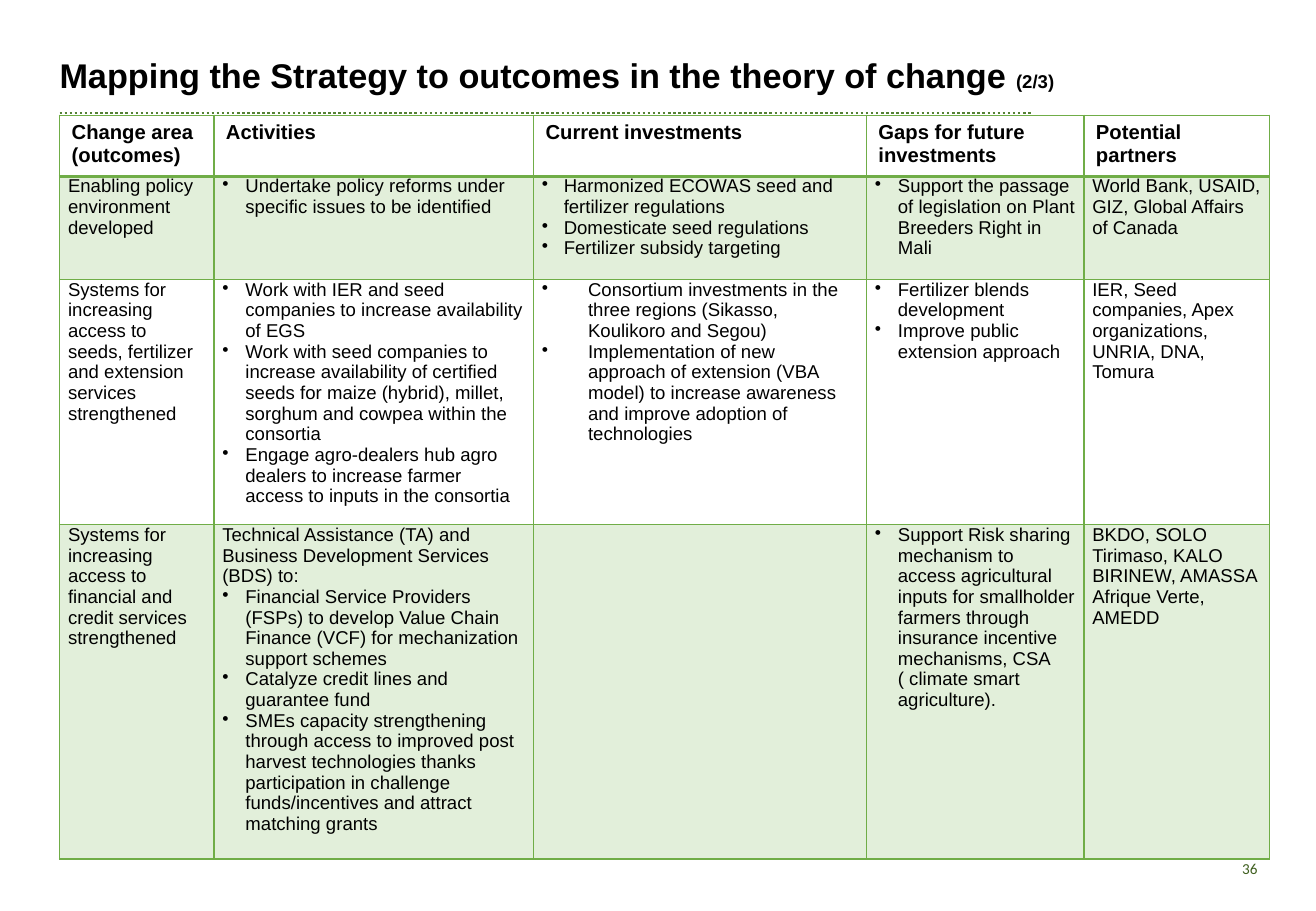
from dataclasses import dataclass

import pptx
import pptx.dml.color
import pptx.enum.dml
import pptx.enum.shapes
import pptx.enum.text
import pptx.oxml
import pptx.oxml.ns
import pptx.util
from lxml import etree
from pptx.util import Inches, Pt


@dataclass(frozen=True)
class Theme:
    ink: str = "000000"
    border: str = "70AD47"
    band: str = "E2EFDA"
    rule: str = "548135"
    page_number: str = "3F5F1F"
    font: str = "Arial"
    number_font: str = "Calibri"
    title_size: float = 20.3
    header_size: float = 12
    body_size: float = 11
    number_size: float = 9


THEME = Theme()
BULLET = "• "  # marks the bulleted paragraphs in ROWS

COLUMN_WIDTHS = [1.27, 2.63, 2.74, 1.79, 1.53]
ROW_HEIGHTS = [0.48, 0.85, 1.87, 2.55]
BULLET_INDENTS = [0.19, 0.19, 0.18, 0.19, 0.19]
WIDE_INDENT_CELL, WIDE_INDENT = (2, 2), 0.38

HEADERS = ["Change area (outcomes)", "Activities", "Current investments",
           "Gaps for future investments", "Potential partners"]
ROWS = [
    [
        ["Enabling policy environment developed"],
        ["• Undertake policy reforms under specific issues to be identified"],
        ["• Harmonized ECOWAS seed and fertilizer regulations",
         "• Domesticate seed regulations",
         "• Fertilizer subsidy targeting"],
        ["• Support the passage of legislation on Plant Breeders Right in Mali"],
        ["World Bank, USAID, GIZ, Global Affairs of Canada"],
    ],
    [
        ["Systems for increasing access to seeds, fertilizer and extension "
         "services strengthened"],
        ["• Work with IER and seed companies to increase availability of EGS",
         "• Work with seed companies to increase availability of certified seeds "
         "for maize (hybrid), millet, sorghum and cowpea within the consortia",
         "• Engage agro-dealers hub agro dealers to increase farmer access to "
         "inputs in the consortia"],
        ["• Consortium investments in the three regions (Sikasso, Koulikoro "
         "and Segou)",
         "• Implementation of new approach of extension (VBA model) to increase "
         "awareness and improve adoption of technologies"],
        ["• Fertilizer blends development",
         "• Improve public extension approach"],
        ["IER, Seed companies, Apex organizations, UNRIA, DNA, Tomura"],
    ],
    [
        ["Systems for increasing access to financial and credit services "
         "strengthened"],
        ["Technical Assistance (TA) and Business Development Services (BDS) to:",
         "• Financial Service Providers (FSPs) to develop Value Chain Finance "
         "(VCF) for mechanization support schemes",
         "• Catalyze credit lines and guarantee fund",
         "• SMEs capacity strengthening through access to improved post harvest "
         "technologies thanks participation in challenge funds/incentives and "
         "attract matching grants"],
        [],
        ["• Support Risk sharing mechanism to access agricultural inputs for "
         "smallholder farmers through insurance incentive mechanisms, CSA "
         "( climate smart agriculture)."],
        ["BKDO, SOLO Tirimaso, KALO BIRINEW, AMASSA Afrique Verte, AMEDD"],
    ],
]


def rgb(value):
    return pptx.dml.color.RGBColor.from_string(value)


def set_font(font, size, bold=False, color=THEME.ink, name=THEME.font):
    font.name, font.size, font.bold = name, Pt(size), bold
    font.color.rgb = rgb(color)


def set_margins(frame, side, top):
    frame.margin_left = frame.margin_right = Inches(side)
    frame.margin_top = frame.margin_bottom = Inches(top)


def add_text_box(page, left, top, width, height, anchor, side=0, top_margin=0):
    box = page.shapes.add_textbox(Inches(left), Inches(top), Inches(width), Inches(height))
    frame = box.text_frame
    frame.word_wrap = True
    frame.vertical_anchor = anchor
    set_margins(frame, side, top_margin)
    return frame.paragraphs[0]


def add_title(page):
    para = add_text_box(page, 0.49, 0.15, 8.24, 0.64, pptx.enum.text.MSO_ANCHOR.BOTTOM)
    para.line_spacing = 0.9
    for text, size in (("Mapping the Strategy to outcomes in the theory of change ",
                        THEME.title_size), ("(2/3)", THEME.body_size)):
        span = para.add_run()
        span.text = text
        set_font(span.font, size, bold=True)


def add_page_number(page):
    para = add_text_box(page, 7.91, 6.95, 2.53, 0.4,
                        pptx.enum.text.MSO_ANCHOR.MIDDLE, 0.09, 0.04)
    para.text = "36"
    para.alignment = pptx.enum.text.PP_ALIGN.RIGHT
    set_font(para.font, THEME.number_size, color=THEME.page_number, name=THEME.number_font)


def add_dotted_rule(page):
    rule = page.shapes.add_connector(
        pptx.enum.shapes.MSO_CONNECTOR.STRAIGHT,
        Inches(0.49), Inches(0.93), Inches(8.49), Inches(0.93))
    rule.line.color.rgb = rgb(THEME.rule)
    rule.line.width = Pt(1.5)
    rule.line.dash_style = pptx.enum.dml.MSO_LINE.ROUND_DOT
    etree.SubElement(rule._element.spPr, pptx.oxml.ns.qn("a:effectLst"))


def set_borders(cell, top=1, bottom=1):
    properties = cell._tc.get_or_add_tcPr()
    sides = {"lnL": 1, "lnR": 1, "lnT": top, "lnB": bottom}
    for position, (side, points) in enumerate(sides.items()):
        properties.insert(position, pptx.oxml.parse_xml(
            f'<a:{side} {pptx.oxml.ns.nsdecls("a")} w="{Pt(points)}"><a:solidFill>'
            f'<a:srgbClr val="{THEME.border}"/></a:solidFill></a:{side}>'))


def add_bullet(para, indent):
    properties = para._p.get_or_add_pPr()
    properties.set("marL", str(Inches(indent)))
    properties.set("indent", str(-Inches(indent)))
    bullet = etree.SubElement(properties, pptx.oxml.ns.qn("a:buChar"))
    bullet.set("char", BULLET.strip())


def fill_cell(cell, texts, size, bold=False, indent=0):
    frame = cell.text_frame
    for index, text in enumerate(texts or [""]):
        para = frame.add_paragraph() if index else frame.paragraphs[0]
        para.text = text.removeprefix(BULLET)
        if text.startswith(BULLET):
            add_bullet(para, indent)
        set_font(para.font, size, bold)


def add_outcome_table(page):
    table = page.shapes.add_table(
        len(ROW_HEIGHTS), len(COLUMN_WIDTHS), Inches(0.49), Inches(0.95),
        Inches(sum(COLUMN_WIDTHS)), Inches(sum(ROW_HEIGHTS))).table
    for column, width in zip(table.columns, COLUMN_WIDTHS):
        column.width = Inches(width)
    for row, height in zip(table.rows, ROW_HEIGHTS):
        row.height = Inches(height)

    # Header row
    for column, text in enumerate(HEADERS):
        cell = table.cell(0, column)
        fill_cell(cell, [text], THEME.header_size, bold=True)
        cell.fill.background()
        set_borders(cell, bottom=2)

    # Body rows, every other one tinted
    for row, cells in enumerate(ROWS, start=1):
        for column, texts in enumerate(cells):
            cell = table.cell(row, column)
            wide = (row, column) == WIDE_INDENT_CELL
            fill_cell(cell, texts, THEME.body_size,
                      indent=WIDE_INDENT if wide else BULLET_INDENTS[column])
            set_margins(cell, 0.07, 0)
            if row % 2:
                cell.fill.solid()
                cell.fill.fore_color.rgb = rgb(THEME.band)
            else:
                cell.fill.background()
            set_borders(cell, top=2 if row == 1 else 1)


def main():
    deck = pptx.Presentation()
    deck.slide_width, deck.slide_height = Inches(10.83), Inches(7.5)
    page = deck.slides.add_slide(deck.slide_layouts[6])
    add_page_number(page)
    add_dotted_rule(page)
    add_title(page)
    add_outcome_table(page)
    deck.save("out.pptx")


if __name__ == "__main__":
    main()
